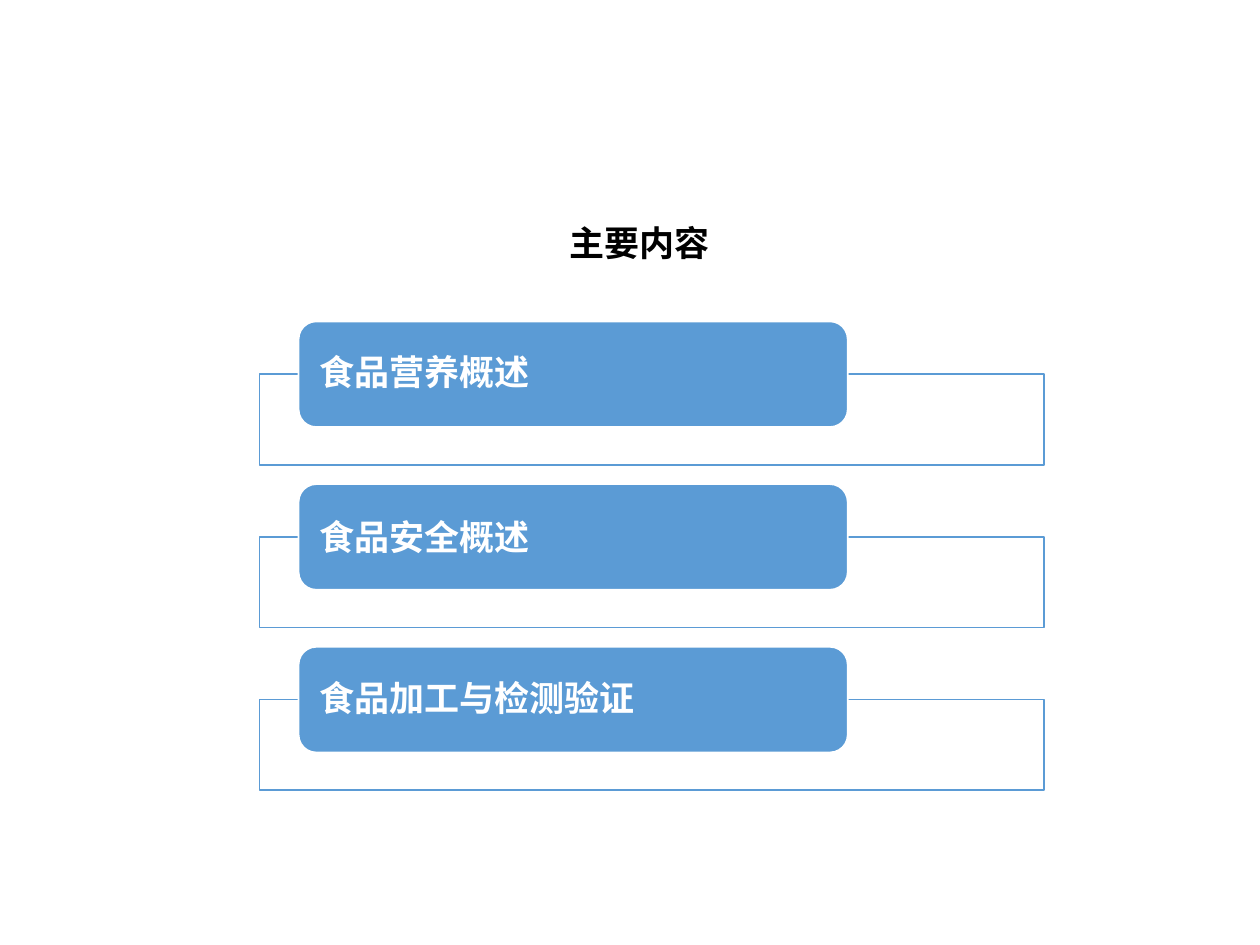
from lxml import etree
from pptx import Presentation
from pptx.dml.color import RGBColor
from pptx.enum.shapes import MSO_SHAPE
from pptx.enum.text import MSO_ANCHOR, PP_ALIGN
from pptx.oxml.ns import qn
from pptx.util import Cm, Pt

BLUE = RGBColor(0x5B, 0x9B, 0xD5)
WHITE = RGBColor(0xFF, 0xFF, 0xFF)
BLACK = RGBColor(0, 0, 0)
RECT, ROUND = MSO_SHAPE.RECTANGLE, MSO_SHAPE.ROUNDED_RECTANGLE
LEFT, CENTER = PP_ALIGN.LEFT, PP_ALIGN.CENTER
TOP, MIDDLE = MSO_ANCHOR.TOP, MSO_ANCHOR.MIDDLE

# Each topic with its line spacing
TOPICS = [("食品营养概述", 0.9), ("食品安全概述", None), ("食品加工与检测验证", 0.9)]
FIRST, PITCH = 6.48, 3.28


def put_text(shape, text, font="Calibri", color=WHITE, align=LEFT,
             anchor=MIDDLE, side=0.31, edge=0, spacing=None):
    frame = shape.text_frame
    frame.word_wrap = True
    frame.vertical_anchor = anchor
    frame.margin_left = frame.margin_right = Cm(side)
    frame.margin_top = frame.margin_bottom = Cm(edge)
    para = frame.paragraphs[0]
    para.alignment = align
    para.line_spacing = spacing
    run = para.add_run()
    run.text = text
    run.font.name = font
    run.font.size = Pt(20)
    run.font.bold = True
    run.font.color.rgb = color


def add_box(slide, kind, left, top, width, height, fill, line):
    box = slide.shapes.add_shape(kind, Cm(left), Cm(top), Cm(width), Cm(height))
    box.shadow.inherit = False
    box.fill.solid()
    box.fill.fore_color.rgb = fill
    box.line.color.rgb = line
    box.line.width = Pt(1)
    return box


def set_alpha(box, percent):
    color = box.fill._xPr.find(qn("a:solidFill"))[0]
    etree.SubElement(color, qn("a:alpha"), val=str(percent * 1000))


def add_title(slide, text):
    box = slide.shapes.add_textbox(Cm(2.51), Cm(4.34), Cm(20.78), Cm(1.12))
    put_text(box, text, font="Arial", color=BLACK, align=CENTER,
             anchor=TOP, side=0.25, edge=0.13)


def add_topic(slide, top, text, spacing):
    # Outlined frame behind the label
    frame = add_box(slide, RECT, 5.23, top + 1.06, 15.82, 1.83, WHITE, BLUE)
    set_alpha(frame, 90)
    # Rounded label
    label = add_box(slide, ROUND, 6.02, top, 11.07, 2.13, BLUE, WHITE)
    put_text(label, text, spacing=spacing)


def main():
    deck = Presentation()
    deck.slide_width, deck.slide_height = Cm(25.4), Cm(19.05)
    slide = deck.slides.add_slide(deck.slide_layouts[6])
    add_title(slide, "主要内容")
    for row, (text, spacing) in enumerate(TOPICS):
        add_topic(slide, FIRST + row * PITCH, text, spacing)
    deck.save("out.pptx")


if __name__ == "__main__":
    main()
